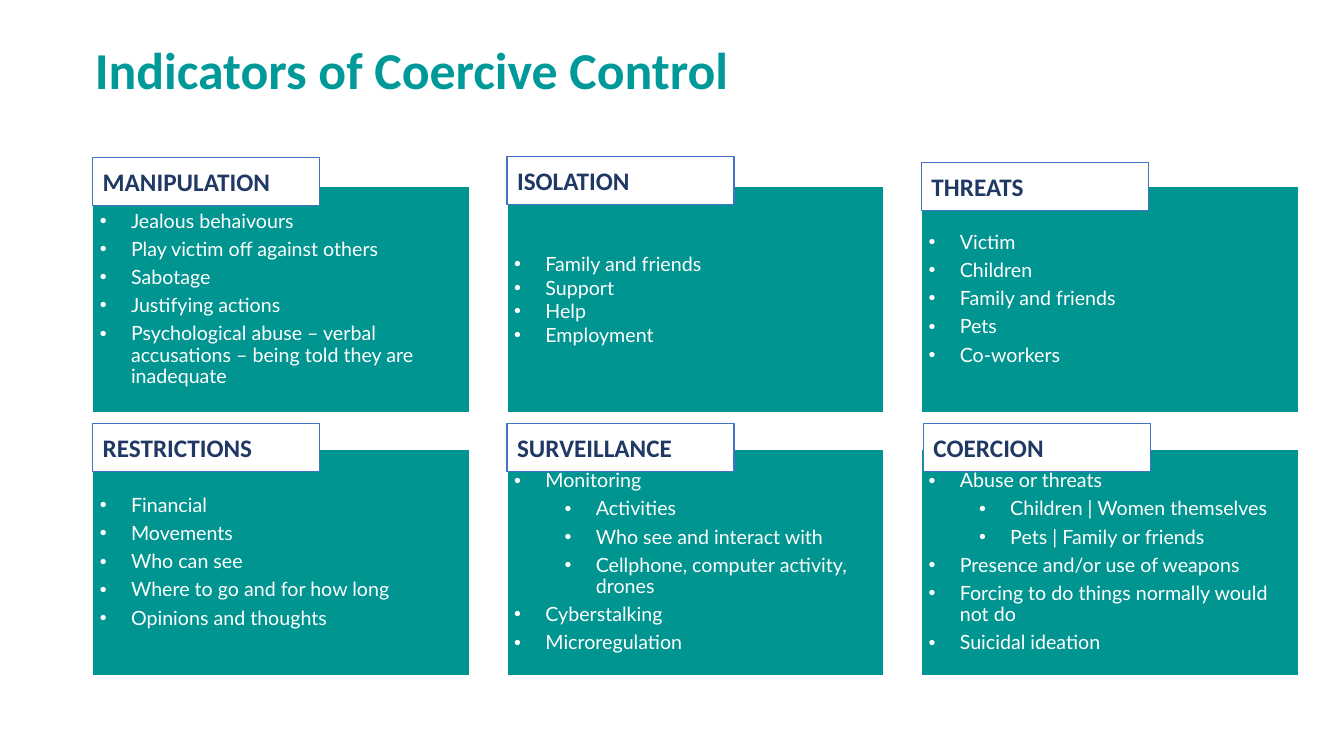
"""Build the slide of six panels on indicators of coercive control."""
import lxml.etree
import pptx
import pptx.dml.color
import pptx.enum.shapes
import pptx.enum.text
import pptx.oxml.ns
import pptx.util

Inches = pptx.util.Inches
Pt = pptx.util.Pt

TITLE = "Indicators of Coercive Control"
TIGHT = {"line_spacing": 0.9, "space_after": Pt(5)}
SINGLE = {"line_spacing": 1.0, "space_after": Pt(0)}
PANELS = [
    {"label": "MANIPULATION", "label_shift": (0, 0), "spacing": TIGHT, "points": [
        (0, "Jealous behaivours"),
        (0, "Play victim off against others"),
        (0, "Sabotage"),
        (0, "Justifying actions"),
        (0, "Psychological abuse – verbal accusations – being told they are inadequate")]},
    {"label": "ISOLATION", "label_shift": (0, -0.01), "spacing": SINGLE, "points": [
        (0, "Family and friends"),
        (0, "Support"),
        (0, "Help"),
        (0, "Employment")]},
    {"label": "THREATS", "label_shift": (0, 0.05), "spacing": TIGHT, "points": [
        (0, "Victim"),
        (0, "Children"),
        (0, "Family and friends"),
        (0, "Pets"),
        (0, "Co-workers")]},
    {"label": "RESTRICTIONS", "label_shift": (0, 0), "spacing": TIGHT, "points": [
        (0, "Financial"),
        (0, "Movements"),
        (0, "Who can see"),
        (0, "Where to go and for how long"),
        (0, "Opinions and thoughts")]},
    {"label": "SURVEILLANCE", "label_shift": (0, 0), "spacing": TIGHT, "points": [
        (0, "Monitoring"),
        (1, "Activities"),
        (1, "Who see and interact with"),
        (1, "Cellphone, computer activity, drones"),
        (0, "Cyberstalking"),
        (0, "Microregulation")]},
    {"label": "COERCION", "label_shift": (0.02, 0), "spacing": TIGHT, "points": [
        (0, "Abuse or threats"),
        (1, "Children | Women themselves"),
        (1, "Pets | Family or friends"),
        (0, "Presence and/or use of weapons"),
        (0, "Forcing to do things normally would not do"),
        (0, "Suicidal ideation")]},
]
COLUMNS = 3
LEFT, COLUMN_STEP = 0.92, 4.11
PANEL_TOPS, LABEL_TOPS = (1.85, 4.46), (1.56, 4.2)
PANEL_SIZE, LABEL_SIZE = (3.74, 2.24), (2.25, 0.48)
TITLE_FONT = {"name": "Calibri", "size": Pt(37), "bold": True}
LABEL_FONT = {"name": "Calibri", "size": Pt(18), "bold": True}
POINT_FONT = {"name": "Lato", "size": Pt(14), "bold": False}
PANEL_MARGIN = Inches(0.07)
PANEL_FRAME = {f"margin_{side}": PANEL_MARGIN for side in ("left", "right", "top", "bottom")}


def color(hex_string):
    return pptx.dml.color.RGBColor.from_string(hex_string)


def apply(target, values):
    for name, value in values.items():
        setattr(target, name, value)


def write(para, text, font, hex_string):
    span = para.add_run()
    span.text = text
    apply(span.font, font)
    span.font.color.rgb = color(hex_string)
    para.alignment = pptx.enum.text.PP_ALIGN.LEFT


def add_box(page, left, top, size, fill, line):
    box = page.shapes.add_shape(pptx.enum.shapes.MSO_SHAPE.RECTANGLE,
                                *map(Inches, (left, top, *size)))
    box.shadow.inherit = False
    box.fill.solid()
    box.fill.fore_color.rgb = color(fill)
    box.line.color.rgb = color(line)
    box.line.width = Pt(1)
    apply(box.text_frame, {"word_wrap": True,
                           "vertical_anchor": pptx.enum.text.MSO_ANCHOR.MIDDLE})
    return box


def add_bullet(para, level):
    para.level = level
    properties = para._p.get_or_add_pPr()
    properties.set("marL", str(Inches(0.31 + 0.5 * level)))
    properties.set("indent", str(Inches(-0.31)))
    for tag, name, value in (("a:buFont", "typeface", "Arial"), ("a:buChar", "char", "•")):
        lxml.etree.SubElement(properties, pptx.oxml.ns.qn(tag)).set(name, value)


def add_panel(page, left, top, points, spacing):
    frame = add_box(page, left, top, PANEL_SIZE, "009590", "FFFFFF").text_frame
    apply(frame, PANEL_FRAME)
    for index, (level, text) in enumerate(points):
        para = frame.add_paragraph() if index else frame.paragraphs[0]
        write(para, text, POINT_FONT, "FFFFFF")
        apply(para, spacing)
        add_bullet(para, level)


def main():
    deck = pptx.Presentation()
    apply(deck, {"slide_width": Inches(13.33), "slide_height": Inches(7.5)})
    page = deck.slides.add_slide(deck.slide_layouts[5])

    title = page.shapes.title
    apply(title, {"left": Inches(0.84), "top": Inches(0),
                  "width": Inches(11.5), "height": Inches(1.45)})
    apply(title.text_frame, {"auto_size": pptx.enum.text.MSO_AUTO_SIZE.NONE,
                             "vertical_anchor": pptx.enum.text.MSO_ANCHOR.MIDDLE})
    heading = title.text_frame.paragraphs[0]
    write(heading, TITLE, TITLE_FONT, "009999")
    heading.line_spacing = 0.9

    for index, panel in enumerate(PANELS):
        row, column = divmod(index, COLUMNS)
        left = LEFT + column * COLUMN_STEP
        add_panel(page, left, PANEL_TOPS[row], panel["points"], panel["spacing"])
        shift_x, shift_y = panel["label_shift"]
        label = add_box(page, left + shift_x, LABEL_TOPS[row] + shift_y,
                        LABEL_SIZE, "FFFFFF", "4472C4")
        write(label.text_frame.paragraphs[0], panel["label"], LABEL_FONT, "203864")

    deck.save("out.pptx")


if __name__ == "__main__":
    main()
